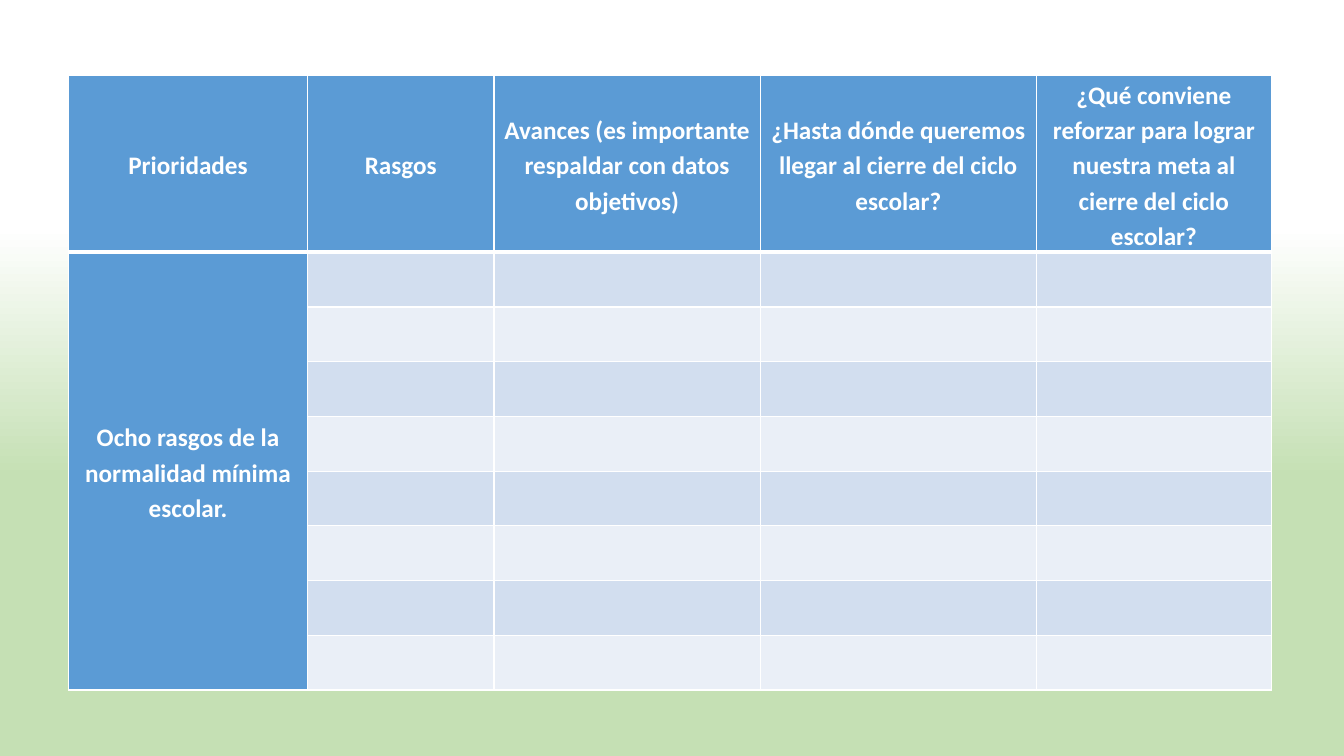
from lxml.etree import SubElement
from pptx import Presentation
from pptx.dml.color import RGBColor
from pptx.enum.text import MSO_ANCHOR as Anchor, PP_ALIGN as Align
from pptx.oxml.ns import qn
from pptx.util import Cm, Pt

HEADERS = [
    "Prioridades",
    "Rasgos",
    "Avances (es importante respaldar con datos objetivos)",
    "¿Hasta dónde queremos llegar al cierre del ciclo escolar?",
    "¿Qué conviene reforzar para lograr nuestra meta al cierre del ciclo escolar?",
]
PRIORITY = "Ocho rasgos de la normalidad mínima escolar."
TRAITS = 8

COL_WIDTHS = [6.02, 4.7, 6.71, 6.96, 5.92]
HEADER_HEIGHT, TRAIT_HEIGHT = 4.37, 1.38
LEFT, TOP = 1.73, 1.9

WHITE = RGBColor(0xFF, 0xFF, 0xFF)
GREEN = RGBColor(0xC5, 0xE0, 0xB4)
BLUE = RGBColor(0x5B, 0x9B, 0xD5)
BANDS = [RGBColor(0xD2, 0xDE, 0xEF), RGBColor(0xEA, 0xEF, 0xF7)]
BACKGROUND = [(0.3, WHITE), (0.63, GREEN)]

CELL = {"vertical_anchor": Anchor.MIDDLE, "margin_left": Cm(0.18),
        "margin_right": Cm(0.18), "margin_top": 0, "margin_bottom": 0}
PARAGRAPH = {"alignment": Align.CENTER, "line_spacing": 1.15}
FONT = {"name": "Calibri", "size": Pt(18), "bold": True}


def apply(target, values):
    for name, value in values.items():
        setattr(target, name, value)


def set_borders(cell, widths):
    tc_pr = cell._tc.get_or_add_tcPr()
    for side, width in widths.items():
        ln = SubElement(tc_pr, qn(f"a:ln{side}"), w=str(Pt(width)))
        fill = SubElement(ln, qn("a:solidFill"))
        SubElement(fill, qn("a:srgbClr"), val=str(WHITE))


def write(cell, text):
    apply(cell, CELL)
    p = cell.text_frame.paragraphs[0]
    apply(p, PARAGRAPH)
    r = p.add_run()
    r.text = text
    apply(r.font, FONT)
    r.font.color.rgb = WHITE


def paint_background(s):
    fill = s.background.fill
    fill.gradient()
    fill.gradient_angle = 270
    for stop, (position, color) in zip(fill.gradient_stops, BACKGROUND):
        stop.position = position
        stop.color.rgb = color


def add_priorities(s):
    heights = [HEADER_HEIGHT] + [TRAIT_HEIGHT] * TRAITS
    table = s.shapes.add_table(
        len(heights), len(COL_WIDTHS), Cm(LEFT), Cm(TOP),
        Cm(sum(COL_WIDTHS)), Cm(sum(heights))).table
    for col, width in zip(table.columns, COL_WIDTHS):
        col.width = Cm(width)
    for row, height in zip(table.rows, heights):
        row.height = Cm(height)

    for i in range(len(heights)):
        for j in range(len(COL_WIDTHS)):
            cell = table.cell(i, j)
            set_borders(cell, {"L": 1, "R": 1, "T": 3 if i == 1 else 1,
                               "B": 3 if i == 0 else 1})
            cell.fill.solid()
            heading = i == 0 or j == 0
            cell.fill.fore_color.rgb = BLUE if heading else BANDS[(i - 1) % 2]

    for j, text in enumerate(HEADERS):
        write(table.cell(0, j), text)
    table.cell(1, 0).merge(table.cell(TRAITS, 0))
    write(table.cell(1, 0), PRIORITY)


def main():
    prs = Presentation()
    prs.slide_width, prs.slide_height = Cm(33.87), Cm(19.05)
    s = prs.slides.add_slide(prs.slide_layouts[6])
    paint_background(s)
    add_priorities(s)
    prs.save("out.pptx")


if __name__ == "__main__":
    main()
